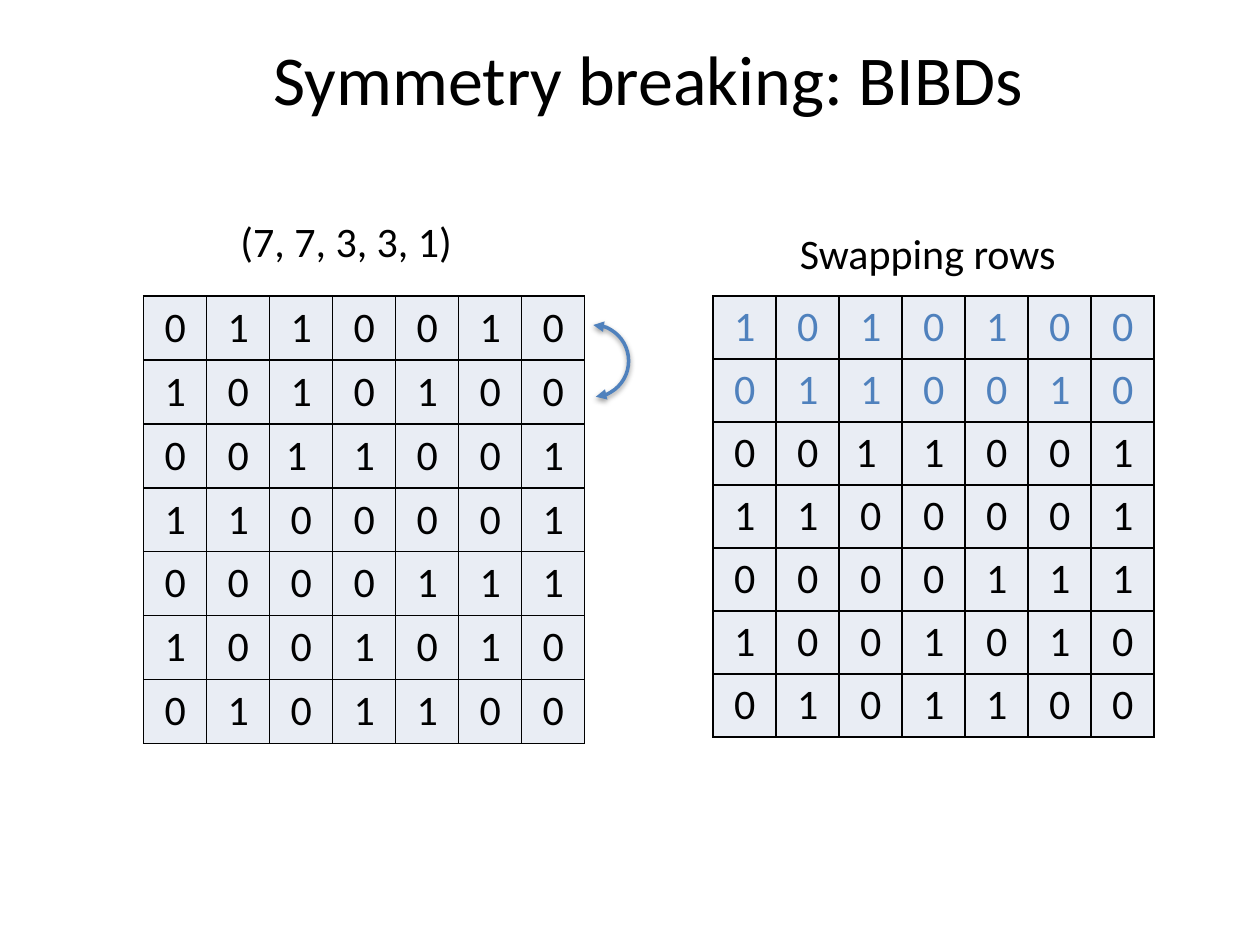
from pptx import Presentation
from pptx import util as u
from pptx.dml.color import RGBColor
from pptx.enum import shapes, text
from pptx.oxml import parse_xml
from pptx.oxml.ns import nsdecls, qn

BLACK, BLUE, PALE = "000000", "4F81BD", "E9EDF4"
DESIGN = [line.split(",") for line in (
    "0,1,1,0,0,1,0",
    "1,0,1,0,1,0,0",
    "0,0,1 ,1,0,0,1",
    "1,1,0,0,0,0,1",
    "0,0,0,0,1,1,1",
    "1,0,0,1,0,1,0",
    "0,1,0,1,1,0,0",
)]


def color(value):
    return RGBColor.from_string(value)


def xml(tag, attributes="", content=""):
    return parse_xml(f"<a:{tag} {nsdecls('a')} {attributes}>{content}</a:{tag}>")


class SlideBuilder:
    font = "Calibri"
    body_size = 24
    title_size = 40
    cell_side = 0.5

    def __init__(self, slide):
        self.slide = slide

    def add_words(self, frame, words, size=body_size, ink=BLACK, align=None):
        para = frame.paragraphs[0]
        para.alignment = align
        span = para.add_run()
        span.text = words
        for name, value in {"name": self.font, "size": u.Pt(size)}.items():
            setattr(span.font, name, value)
        span.font.color.rgb = color(ink)

    def title(self, words, *place):
        box = self.slide.shapes.title
        for name, value in zip(("left", "top", "width", "height"), place):
            setattr(box, name, u.Inches(value))
        box.text_frame.vertical_anchor = text.MSO_ANCHOR.MIDDLE
        self.add_words(box.text_frame, words, self.title_size, align=text.PP_ALIGN.CENTER)

    def label(self, words, *place):
        box = self.slide.shapes.add_textbox(*map(u.Inches, place))
        box.text_frame.word_wrap = True
        box.text_frame.auto_size = text.MSO_AUTO_SIZE.SHAPE_TO_FIT_TEXT
        self.add_words(box.text_frame, words)

    def matrix(self, rows, left, top, margin=0.05, marked=()):
        """Draw a bordered grid of digits; marked row numbers are blue."""
        count = len(rows)
        extent = u.Inches(self.cell_side * count)
        table = self.slide.shapes.add_table(
            count, count, u.Inches(left), u.Inches(top), extent, extent).table
        table.first_row = table.horz_banding = False
        cell_format = {
            "margin_top": u.Inches(margin),
            "margin_bottom": u.Inches(margin),
            "vertical_anchor": text.MSO_ANCHOR.MIDDLE,
        }
        border = f'<a:solidFill><a:srgbClr val="{BLACK}"/></a:solidFill>'
        for row, digits in enumerate(rows):
            for column, digit in enumerate(digits):
                cell = table.cell(row, column)
                for name, value in cell_format.items():
                    setattr(cell, name, value)
                self.add_words(cell.text_frame, digit, ink=BLUE if row in marked else BLACK,
                               align=text.PP_ALIGN.CENTER)
                properties = cell._tc.get_or_add_tcPr()
                for edge in ("lnL", "lnR", "lnT", "lnB"):
                    properties.append(xml(edge, f'w="{u.Pt(1)}"', border))
                cell.fill.solid()
                cell.fill.fore_color.rgb = color(PALE)

    def swap_arc(self, start, end, *place):
        """Draw a double-headed arc; angles are in degrees."""
        arc = self.slide.shapes.add_shape(shapes.MSO_SHAPE.ARC, *map(u.Inches, place))
        for index, angle in enumerate((start, end)):
            arc.adjustments[index] = angle * 0.6
        arc.fill.background()
        arc.line.color.rgb = color(BLUE)
        arc.line.width = u.Pt(2)
        properties = arc._element.spPr
        outline = properties.find(qn("a:ln"))
        for tip in ("headEnd", "tailEnd"):
            outline.append(xml(tip, 'type="triangle"'))
        arc.shadow.inherit = False
        properties.find(qn("a:effectLst")).append(xml(
            "outerShdw",
            f'blurRad="{u.Pt(3.1)}" dist="{u.Pt(1.6)}" dir="5400000" rotWithShape="0"',
            f'<a:srgbClr val="{BLACK}"><a:alpha val="38000"/></a:srgbClr>'))


def main():
    deck = Presentation()
    deck.slide_width, deck.slide_height = u.Inches(10), u.Inches(7.5)
    page = SlideBuilder(deck.slides.add_slide(deck.slide_layouts[5]))

    page.title("Symmetry breaking: BIBDs", 0.29, 0.26, 9.71, 0.71)
    page.matrix(DESIGN, 1.14, 2.35)
    page.label("(7, 7, 3, 3, 1)", 1.81, 1.66, 1.94, 0.5)
    page.swap_arc(270, 85.96, 4.43, 2.58, 0.56, 0.57)

    first, second, *others = DESIGN
    page.matrix([second, first, *others], 5.66, 2.35, margin=0.04, marked=(0, 1))
    page.label("Swapping rows", 6.25, 1.76, 2.35, 0.5)
    deck.save("out.pptx")


if __name__ == "__main__":
    main()
